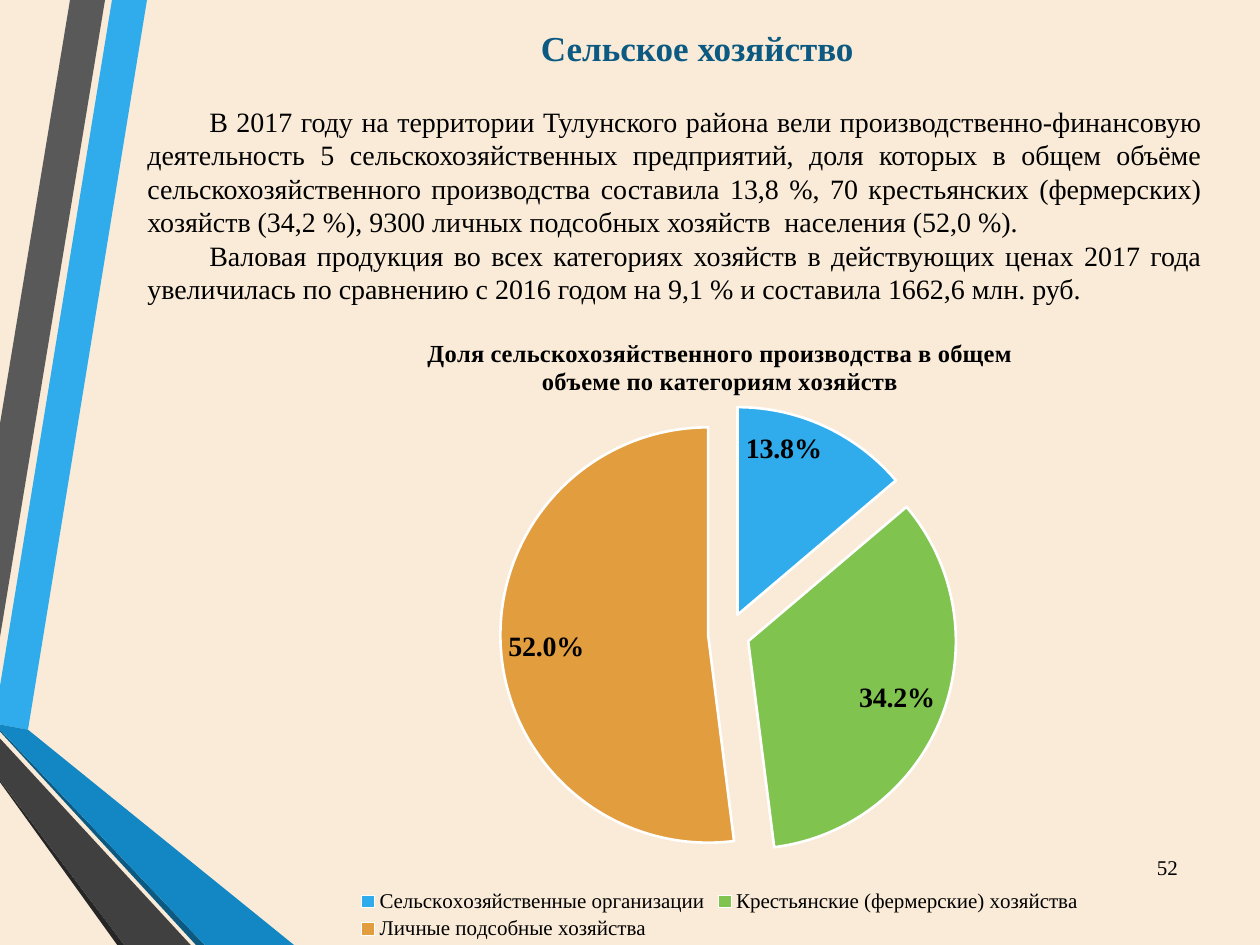
from lxml import etree
from pptx import Presentation
from pptx.chart.data import CategoryChartData
from pptx.dml.color import RGBColor
from pptx.enum.chart import XL_CHART_TYPE, XL_LABEL_POSITION, XL_LEGEND_POSITION
from pptx.enum.text import MSO_ANCHOR, MSO_AUTO_SIZE, PP_ALIGN
from pptx.oxml import parse_xml
from pptx.oxml.ns import nsdecls, qn
from pptx.util import Pt

PIE = XL_CHART_TYPE.PIE
INSIDE_END = XL_LABEL_POSITION.INSIDE_END
BOTTOM = XL_LEGEND_POSITION.BOTTOM
MIDDLE = MSO_ANCHOR.MIDDLE
CENTER, JUSTIFY = PP_ALIGN.CENTER, PP_ALIGN.JUSTIFY
NO_AUTOFIT = MSO_AUTO_SIZE.NONE

FONT = "Times New Roman"
CREAM = RGBColor(0xF9, 0xEB, 0xD8)
BLACK = RGBColor(0, 0, 0)
WHITE = RGBColor(0xFF, 0xFF, 0xFF)
SKY = RGBColor(0x30, 0xAC, 0xEC)
BLUE = RGBColor(0x12, 0x87, 0xC3)
NAVY = RGBColor(0x0C, 0x5A, 0x82)
GRAY = RGBColor(0x59, 0x59, 0x59)
DARK_GRAY = RGBColor(0x40, 0x40, 0x40)
CHARCOAL = RGBColor(0x26, 0x26, 0x26)
GREEN = RGBColor(0x80, 0xC3, 0x4F)
ORANGE = RGBColor(0xE2, 0x9D, 0x3E)

# Ribbon outlines in points, from back to front
RIBBONS = [
    (SKY, [(0, 391.7), (0, 414), (15.8, 416.9), (84.2, 0), (64.1, 0)]),
    (GRAY, [(59.8, 0), (39.6, 0), (0, 241.9), (0, 364.3)]),
    (CHARCOAL, [(0, 445.7), (0, 447.1), (67, 540), (71.3, 540)]),
    (NAVY, [(0, 416.9), (0, 417.6), (112.3, 540), (117.4, 540)]),
    (BLUE, [(0, 416.9), (117.4, 540), (167.8, 540), (15.8, 416.9), (0, 414)]),
    (DARK_GRAY, [(0, 445.7), (71.3, 540), (108.7, 540), (0, 421.9)]),
]

BODY = [
    "В 2017 году на территории Тулунского района вели производственно-финансовую "
    "деятельность 5 сельскохозяйственных предприятий, доля которых в общем объёме "
    "сельскохозяйственного производства составила 13,8 %, 70 крестьянских "
    "(фермерских) хозяйств (34,2 %), 9300 личных подсобных хозяйств  населения "
    "(52,0 %).",
    "Валовая продукция во всех категориях хозяйств в действующих ценах 2017 года "
    "увеличилась по сравнению с 2016 годом на 9,1 % и составила 1662,6 млн. руб.",
]

CHART_TITLE = ("Доля сельскохозяйственного производства в общем "
               "объеме по категориям хозяйств")
SHARES = [
    ("Сельскохозяйственные организации", 0.138, SKY),
    ("Крестьянские (фермерские) хозяйства", 0.342, GREEN),
    ("Личные подсобные хозяйства", 0.52, ORANGE),
]
PLOT_AREA = {"x": 0.237, "y": 0.123, "w": 0.547, "h": 0.768}


def style_font(font, size, color=BLACK, bold=False):
    font.name = FONT
    font.size = Pt(size)
    font.bold = bold
    font.color.rgb = color


def place(shape, left, top, width, height):
    shape.left, shape.top = Pt(left), Pt(top)
    shape.width, shape.height = Pt(width), Pt(height)


def fill_text(shape, paragraphs, alignment, size, color=BLACK, bold=False):
    frame = shape.text_frame
    frame.text = "\n".join(paragraphs)
    frame.word_wrap = True
    frame.auto_size = NO_AUTOFIT
    frame.vertical_anchor = MIDDLE
    for paragraph in frame.paragraphs:
        paragraph.alignment = alignment
        for run in paragraph.runs:
            style_font(run.font, size, color, bold)


def format_body(shape):
    for paragraph in shape.text_frame.paragraphs:
        paragraph.space_before = Pt(0)
        paragraph.line_spacing = Pt(19.2)
        properties = paragraph._p.get_or_add_pPr()
        properties.set("marL", "0")
        properties.set("indent", str(Pt(35.4)))
        etree.SubElement(properties, qn("a:buNone"))


def add_ribbons(slide):
    group = slide.shapes.add_group_shape()
    for color, points in RIBBONS:
        builder = group.shapes.build_freeform(*points[0], scale=Pt(1))
        builder.add_line_segments(points[1:], close=True)
        ribbon = builder.convert_to_shape()
        ribbon.shadow.inherit = False
        ribbon.fill.solid()
        ribbon.fill.fore_color.rgb = color
        ribbon.line.fill.background()
    # Behind the placeholders
    slide.shapes._spTree.insert(2, group._element)


def set_plot_layout(chart):
    plot_area = chart._chartSpace.chart.plotArea
    for layout in plot_area.findall(qn("c:layout")):
        plot_area.remove(layout)
    modes = '<c:layoutTarget val="inner"/><c:xMode val="edge"/><c:yMode val="edge"/>'
    sizes = "".join(f'<c:{key} val="{value}"/>' for key, value in PLOT_AREA.items())
    plot_area.insert(0, parse_xml(
        f'<c:layout {nsdecls("c")}><c:manualLayout>{modes}{sizes}'
        "</c:manualLayout></c:layout>"))


def add_share_chart(slide):
    data = CategoryChartData(number_format="0.0%")
    data.categories = [name for name, _, _ in SHARES]
    data.add_series("Series 1", [share for _, share, _ in SHARES])
    chart = slide.shapes.add_chart(
        PIE, Pt(172.8), Pt(179.3), Pt(477.4), Pt(360.7), data).chart
    style_font(chart.font, 10)
    set_plot_layout(chart)

    # Title and legend
    chart.has_title = True
    title_frame = chart.chart_title.text_frame
    title_frame.text = CHART_TITLE
    style_font(title_frame.paragraphs[0].runs[0].font, 14, bold=True)
    chart.chart_title.include_in_layout = False
    chart.has_legend = True
    chart.legend.position = BOTTOM
    chart.legend.include_in_layout = False
    style_font(chart.legend.font, 12)

    # Slices
    plot = chart.plots[0]
    plot.vary_by_categories = True
    series = plot.series[0]
    for index, (_, _, color) in enumerate(SHARES):
        slice_format = series.points[index].format
        slice_format.fill.solid()
        slice_format.fill.fore_color.rgb = color
        slice_format.line.color.rgb = WHITE
        slice_format.line.width = Pt(1.5)
    explosion = parse_xml(f'<c:explosion {nsdecls("c")} val="10"/>')
    series._element.find(qn("c:dPt")).addprevious(explosion)

    # Value labels
    labels = series.data_labels
    labels.show_value = True
    labels.show_percentage = False
    labels.number_format = "0.0%"
    labels.number_format_is_linked = False
    labels.position = INSIDE_END
    style_font(labels.font, 16, bold=True)


def main():
    presentation = Presentation()
    presentation.slide_width, presentation.slide_height = Pt(720), Pt(540)
    slide = presentation.slides.add_slide(presentation.slide_layouts[1])
    slide.background.fill.solid()
    slide.background.fill.fore_color.rgb = CREAM
    add_ribbons(slide)

    # Title and body
    title, body = slide.placeholders
    place(title, 77, 0, 643, 54.7)
    fill_text(title, ["Сельское хозяйство"], CENTER, 20, NAVY, bold=True)
    place(body, 77, 54.7, 617, 124.6)
    fill_text(body, BODY, JUSTIFY, 16)
    format_body(body)

    # Page number
    number = slide.shapes.add_textbox(Pt(650.2), Pt(481), Pt(33.8), Pt(28.8))
    fill_text(number, ["52"], CENTER, 12)

    add_share_chart(slide)
    presentation.save("out.pptx")


if __name__ == "__main__":
    main()
